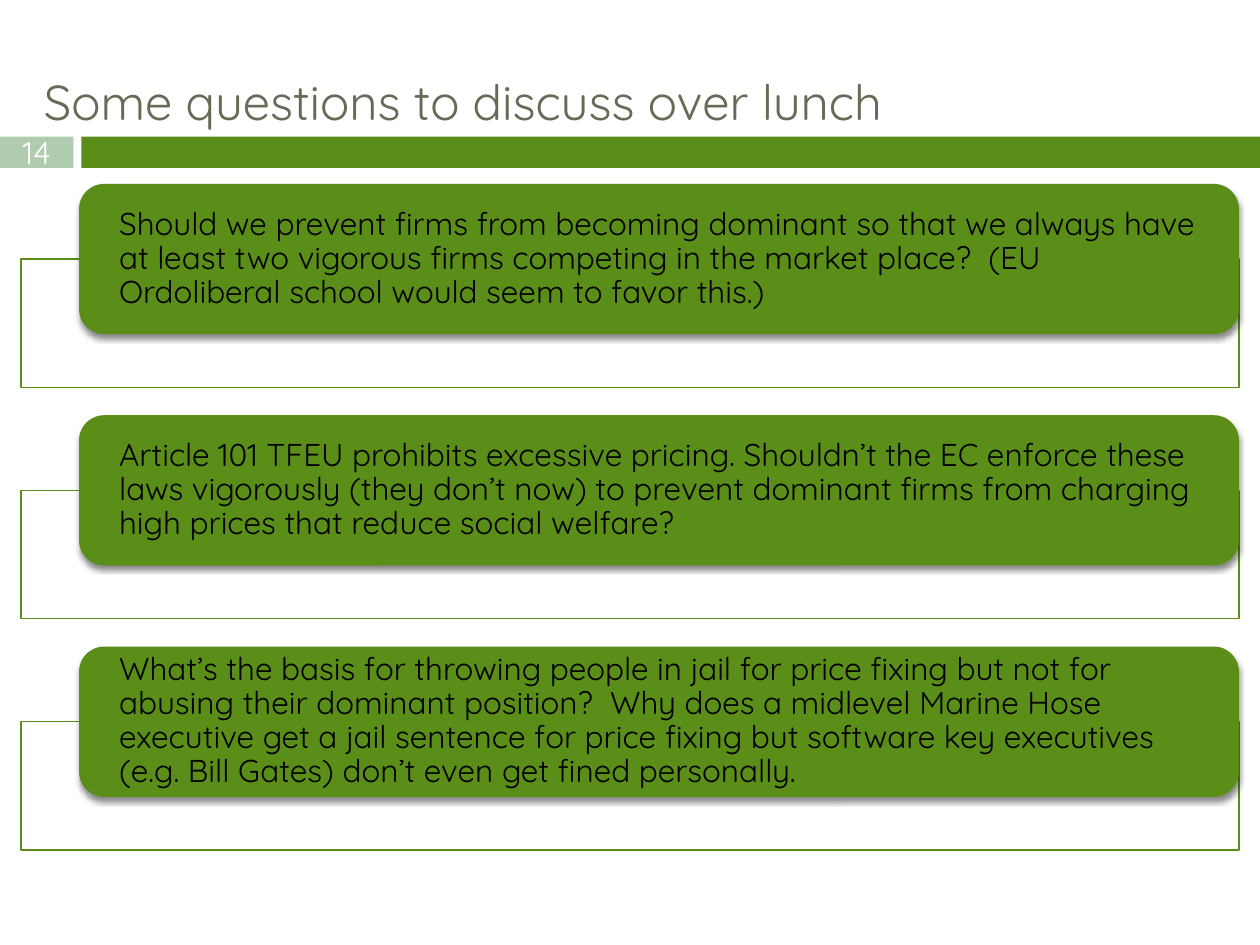
import pptx
import pptx.dml.color
import pptx.enum.shapes
import pptx.enum.text
import pptx.oxml
import pptx.oxml.ns
import pptx.util

Pt = pptx.util.Pt
SHAPES = pptx.enum.shapes.MSO_SHAPE
ANCHOR = pptx.enum.text.MSO_ANCHOR
ALIGN = pptx.enum.text.PP_ALIGN
NAMESPACE = pptx.oxml.ns.nsdecls("a")

COLORS = {
    "green": "5A8E19",
    "sage": "B0CCB0",
    "title": "676A55",
    "white": "FFFFFF",
    "black": "000000",
}

QUESTIONS = [
    "Should we prevent firms from becoming dominant so that we always have at least "
    "two vigorous firms competing in the market place?  (EU Ordoliberal school would "
    "seem to favor this.)",
    "Article 101 TFEU prohibits excessive pricing. Shouldn’t the EC enforce these laws "
    "vigorously (they don’t now) to prevent dominant firms from charging high prices "
    "that reduce social welfare?",
    "What’s the basis for throwing people in jail for price fixing but not for abusing "
    "their dominant position?  Why does a midlevel Marine Hose executive get a jail "
    "sentence for price fixing but software key executives (e.g. Bill Gates) don’t even "
    "get fined personally.",
]


def color(name):
    return pptx.dml.color.RGBColor.from_string(COLORS[name])


def write_text(shape, text, *, size=18, ink="black", font="Quicksand", align=ALIGN.LEFT,
               anchor=ANCHOR.MIDDLE, inset_x=0, inset_y=0, line_spacing=1.0):
    """Fill a shape with one formatted paragraph."""
    frame = shape.text_frame
    frame.word_wrap = True
    frame.vertical_anchor = anchor
    frame.margin_left = frame.margin_right = Pt(inset_x)
    frame.margin_top = frame.margin_bottom = Pt(inset_y)
    paragraph = frame.paragraphs[0]
    paragraph.alignment = align
    paragraph.line_spacing = line_spacing
    run = paragraph.add_run()
    run.text = text
    run.font.name = font
    run.font.size = Pt(size)
    run.font.color.rgb = color(ink)


class SlideBuilder:
    def __init__(self, slide):
        self.slide = slide
        self.line_width = 0.79

    def box(self, left, top, width, height, fill, line=None, kind=SHAPES.RECTANGLE):
        shape = self.slide.shapes.add_shape(kind, Pt(left), Pt(top), Pt(width), Pt(height))
        shape.shadow.inherit = False
        shape.fill.solid()
        shape.fill.fore_color.rgb = color(fill)
        if line:
            shape.line.color.rgb = color(line)
            shape.line.width = Pt(self.line_width)
        else:
            shape.line.fill.background()
        return shape

    def panel(self, left, top, width, height):
        """Outlined rectangle with a slightly transparent white fill."""
        shape = self.box(left, top, width, height, "white", line="green")
        fill_color = shape.fill._xPr.find(".//" + pptx.oxml.ns.qn("a:srgbClr"))
        fill_color.append(pptx.oxml.parse_xml(f'<a:alpha {NAMESPACE} val="90000"/>'))

    def card(self, left, top, width, height, text):
        """Rounded card with a soft shadow below it."""
        shape = self.box(left, top, width, height, "green", kind=SHAPES.ROUNDED_RECTANGLE)
        effects = shape._element.spPr.find(pptx.oxml.ns.qn("a:effectLst"))
        effects.append(pptx.oxml.parse_xml(
            f'<a:outerShdw {NAMESPACE} blurRad="{Pt(3)}" dist="{Pt(2.4)}" dir="5400000" '
            f'rotWithShape="0"><a:srgbClr val="{COLORS["black"]}">'
            f'<a:alpha val="45000"/></a:srgbClr></a:outerShdw>'))
        write_text(shape, text, inset_x=18.7, line_spacing=0.9)

    def title(self, left, top, width, height, text):
        shape = self.slide.shapes.add_textbox(Pt(left), Pt(top), Pt(width), Pt(height))
        write_text(shape, text, size=28, ink="title", anchor=ANCHOR.TOP,
                   inset_x=7.2, inset_y=3.6)


def main():
    presentation = pptx.Presentation()
    presentation.slide_width = Pt(720)
    presentation.slide_height = Pt(540)
    builder = SlideBuilder(presentation.slides.add_slide(presentation.slide_layouts[6]))

    # Header band with the slide number
    band_top, band_height = 78, 18
    number = builder.box(0, band_top, 42, band_height, "sage")
    write_text(number, "14", ink="white", align=ALIGN.CENTER)
    builder.box(46.5, band_top, 673.5, band_height, "green")
    builder.title(18, 37.5, 660, 40.5, "Some questions to discuss over lunch")

    # Questions, each a card overlapping its panel
    first_top, pitch = 105.1, 132.2
    for index, question in enumerate(QUESTIONS):
        top = first_top + index * pitch
        builder.panel(12, top + 42.9, 696, 73.4)
        builder.card(45.2, top, 662.8, 85.9, question)

    presentation.save("out.pptx")


if __name__ == "__main__":
    main()
